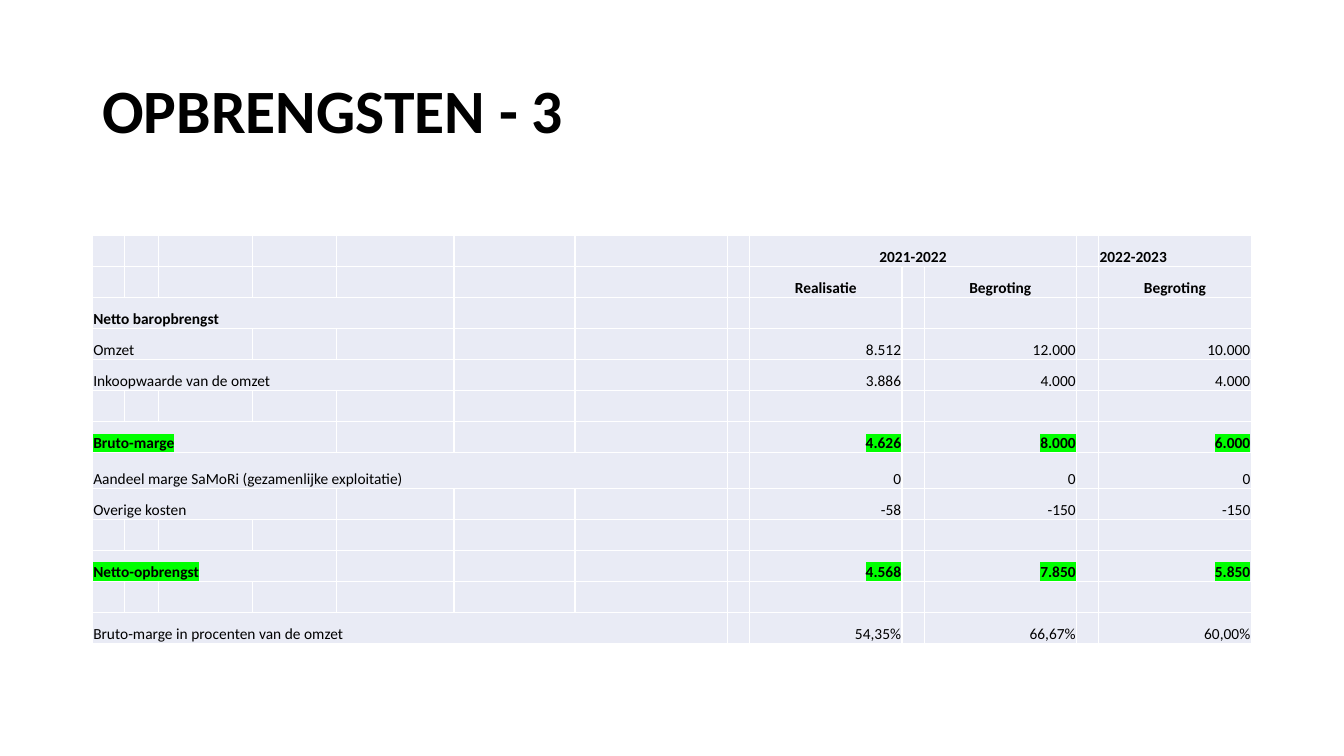
from lxml import etree
from pptx import Presentation
from pptx.dml.color import RGBColor
from pptx.enum.text import MSO_ANCHOR, PP_ALIGN
from pptx.oxml.ns import qn
from pptx.util import Cm, Pt

LEFT, CENTER, RIGHT = PP_ALIGN.LEFT, PP_ALIGN.CENTER, PP_ALIGN.RIGHT
MIDDLE, BOTTOM = MSO_ANCHOR.MIDDLE, MSO_ANCHOR.BOTTOM

COLORS = {"text": "000000", "cell": "E9EBF5", "border": "FFFFFF", "highlight": "00FF00"}
FONT = "Calibri"
TABLE_SIZE = 11
MARGIN_LEFT, CONTENT_WIDTH = 2.33, 29.2

AMOUNT_WIDTH, GAP_WIDTH = 3.84, 0.56
COLUMN_WIDTHS = [0.81, 0.86, 2.36, 2.11, 2.97, 3.05, 3.84] + [GAP_WIDTH, AMOUNT_WIDTH] * 3
AMOUNT_COLUMNS = (8, 10, 12)
ROW_HEIGHT, SHARE_ROW_HEIGHT = 0.78, 0.91
SHARE_ROW = 7

# Label, number of columns it spans, amounts, style
BODY_ROWS = [
    ("Netto baropbrengst", 5, (), "bold"),
    ("Omzet", 3, ("8.512", "12.000", "10.000"), "plain"),
    ("Inkoopwaarde van de omzet", 5, ("3.886", "4.000", "4.000"), "plain"),
    None,
    ("Bruto-marge", 4, ("4.626", "8.000", "6.000"), "total"),
    ("Aandeel marge SaMoRi (gezamenlijke exploitatie)", 7, ("0", "0", "0"), "plain"),
    ("Overige kosten", 4, ("-58", "-150", "-150"), "plain"),
    None,
    ("Netto-opbrengst", 4, ("4.568", "7.850", "5.850"), "total"),
    None,
    ("Bruto-marge in procenten van de omzet", 7, ("54,35%", "66,67%", "60,00%"), "plain"),
]
HEADER_ROW_COUNT = 2


def add_run(paragraph, text, size, bold=False, highlighted=False):
    run = paragraph.add_run()
    run.text = text
    run.font.size = Pt(size)
    run.font.bold = bold
    run.font.color.rgb = RGBColor.from_string(COLORS["text"])
    run.font.name = FONT
    if highlighted:
        highlight = etree.Element(qn("a:highlight"))
        etree.SubElement(highlight, qn("a:srgbClr"), val=COLORS["highlight"])
        run.font._element.find(qn("a:solidFill")).addnext(highlight)


def add_title(slide, text):
    shape = slide.shapes.add_textbox(Cm(MARGIN_LEFT), Cm(1.01), Cm(CONTENT_WIDTH), Cm(3.68))
    frame = shape.text_frame
    frame.word_wrap = True
    frame.vertical_anchor = MIDDLE
    paragraph = frame.paragraphs[0]
    paragraph.line_spacing = 0.9
    add_run(paragraph, text, 44, bold=True)


def add_borders(cell):
    properties = cell._tc.get_or_add_tcPr()
    for side in ("lnL", "lnR", "lnT", "lnB"):
        line = etree.SubElement(properties, qn(f"a:{side}"), w=str(Pt(1)))
        fill = etree.SubElement(line, qn("a:solidFill"))
        etree.SubElement(fill, qn("a:srgbClr"), val=COLORS["border"])


def format_cell(cell):
    add_borders(cell)
    cell.fill.solid()
    cell.fill.fore_color.rgb = RGBColor.from_string(COLORS["cell"])
    cell.margin_left = cell.margin_right = cell.margin_top = Cm(0.02)
    cell.margin_bottom = 0
    cell.vertical_anchor = BOTTOM
    # Keeps empty cells from stretching their row
    etree.SubElement(cell.text_frame.paragraphs[0]._p, qn("a:endParaRPr"),
                     sz=str(TABLE_SIZE * 100))


def write_cell(cell, text, alignment, style):
    paragraph = cell.text_frame.paragraphs[0]
    paragraph.alignment = alignment
    add_run(paragraph, text, TABLE_SIZE, style != "plain", style == "total")


def add_empty_table(slide):
    row_count = HEADER_ROW_COUNT + len(BODY_ROWS)
    height = ROW_HEIGHT * (row_count - 1) + SHARE_ROW_HEIGHT
    table = slide.shapes.add_table(row_count, len(COLUMN_WIDTHS), Cm(MARGIN_LEFT), Cm(5.94),
                                   Cm(CONTENT_WIDTH), Cm(height)).table
    table.first_row = table.horz_banding = False
    for column, width in zip(table.columns, COLUMN_WIDTHS):
        column.width = Cm(width)
    for index, row in enumerate(table.rows):
        row.height = Cm(SHARE_ROW_HEIGHT if index == SHARE_ROW else ROW_HEIGHT)
    for cell in table.iter_cells():
        format_cell(cell)
    return table


def fill_header(table):
    first, middle, last = AMOUNT_COLUMNS
    table.cell(0, first).merge(table.cell(0, middle))
    write_cell(table.cell(0, first), "2021-2022", CENTER, "bold")
    write_cell(table.cell(0, last), "2022-2023", LEFT, "bold")
    for column, text in zip(AMOUNT_COLUMNS, ("Realisatie", "Begroting", "Begroting")):
        write_cell(table.cell(1, column), text, CENTER, "bold")


def fill_body(table):
    for row, content in enumerate(BODY_ROWS, HEADER_ROW_COUNT):
        if content is None:
            continue
        label, span, amounts, style = content
        table.cell(row, 0).merge(table.cell(row, span - 1))
        write_cell(table.cell(row, 0), label, LEFT, style)
        for column, amount in zip(AMOUNT_COLUMNS, amounts):
            write_cell(table.cell(row, column), amount, RIGHT, style)


def main():
    presentation = Presentation()
    presentation.slide_width = Cm(33.87)
    presentation.slide_height = Cm(19.05)
    slide = presentation.slides.add_slide(presentation.slide_layouts[6])
    add_title(slide, "OPBRENGSTEN - 3")
    table = add_empty_table(slide)
    fill_header(table)
    fill_body(table)
    presentation.save("out.pptx")


if __name__ == "__main__":
    main()
